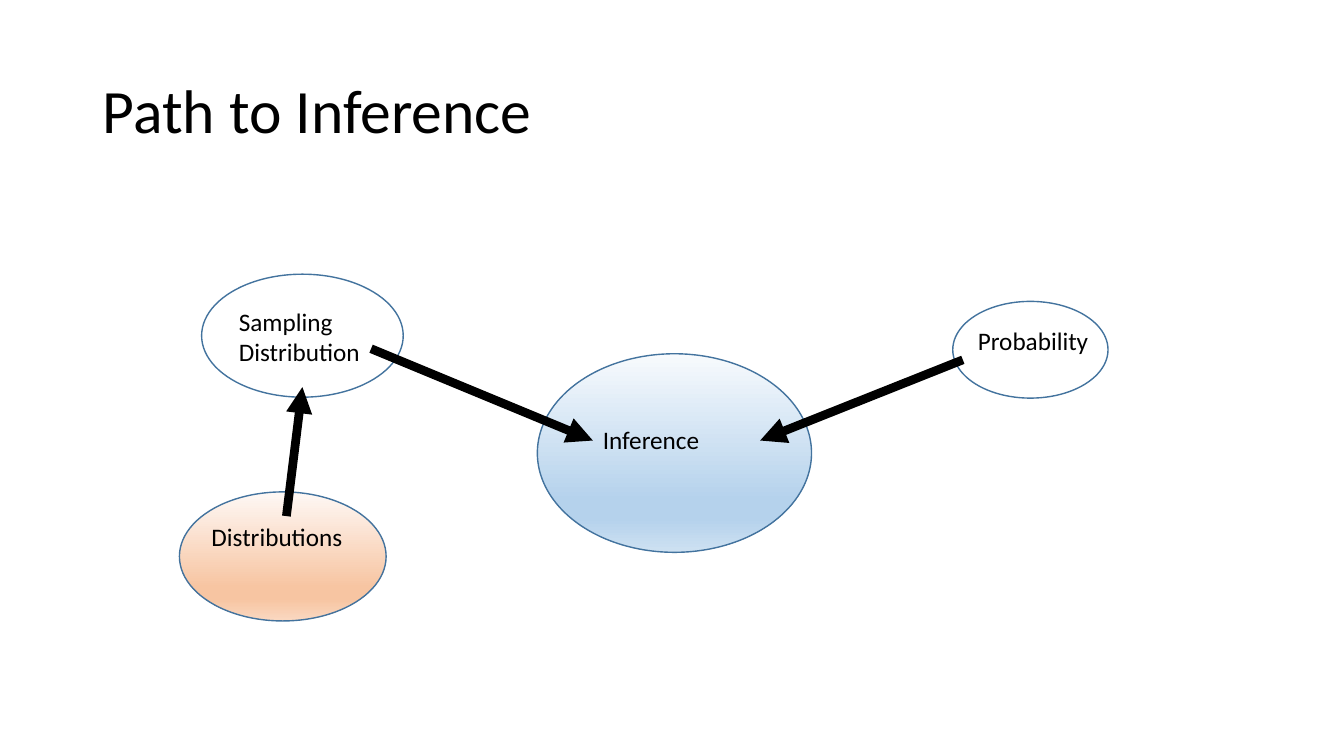
from typing import NamedTuple, Optional

from lxml import etree
from pptx import Presentation
from pptx import util as u
from pptx.dml.color import RGBColor
from pptx.enum import shapes, text
from pptx.oxml.ns import qn

FONT = "Calibri"
BLACK = "000000"
OUTLINE = "43739E"
BLUE = ("F7FAFD", "B5D2EC", "B5D2EC", "CEE1F2")
ORANGE = ("FEF8F5", "F7C5A2", "F7C5A2", "FAD8C1")
STOPS = (0, 74, 83, 100)


class Box(NamedTuple):
    """Left, top, width and height in percent of the slide."""
    left: float
    top: float
    width: float
    height: float


class Bubble(NamedTuple):
    label: str
    oval: Box
    label_box: Box
    gradient: Optional[tuple[str, ...]] = None


class Arrow(NamedTuple):
    """Tail and head points in percent of the slide."""
    tail: tuple[float, float]
    head: tuple[float, float]


BUBBLES = [
    Bubble("Inference", Box(39.98, 46.8, 20.4, 26.27), Box(44.11, 55.47, 14.7, 5.33), BLUE),
    Bubble("Sampling Distribution", Box(15, 36.27, 15, 16.27), Box(17.03, 39.87, 12.98, 9.47)),
    Bubble("Probability", Box(70.89, 39.87, 11.55, 12.8), Box(72.02, 42.4, 13.58, 5.33)),
    Bubble("Distributions", Box(13.35, 65.07, 15.38, 17.07), Box(15, 68.27, 12.6, 5.33), ORANGE),
]
ARROWS = [
    Arrow((27.61, 46.13), (44.11, 58.27)),
    Arrow((71.64, 47.6), (56.56, 58.27)),
    Arrow((21.31, 68.27), (22.5, 51.2)),
]

presentation = Presentation()
presentation.slide_width = u.Inches(13.33)
presentation.slide_height = u.Inches(7.5)
slide = presentation.slides.add_slide(presentation.slide_layouts[5])


def color(value: str) -> RGBColor:
    return RGBColor.from_string(value)


def across(percent: float) -> int:
    return round(presentation.slide_width * percent / 100)


def down(percent: float) -> int:
    return round(presentation.slide_height * percent / 100)


def place(box: Box) -> tuple[int, int, int, int]:
    return across(box.left), down(box.top), across(box.width), down(box.height)


def add_run(paragraph, words: str, size: float) -> None:
    run = paragraph.add_run()
    run.text = words
    run.font.name = FONT
    run.font.size = u.Pt(size)
    run.font.color.rgb = color(BLACK)


def fill_gradient(shape, colors: tuple[str, ...]) -> None:
    shape.fill.gradient()
    shape.fill.gradient_angle = 270  # top to bottom
    stop_list = shape.element.spPr.find(".//" + qn("a:gsLst"))
    for stop in list(stop_list):
        stop_list.remove(stop)
    for position, value in zip(STOPS, colors):
        stop = etree.SubElement(stop_list, qn("a:gs"), pos=str(position * 1000))
        etree.SubElement(stop, qn("a:srgbClr"), val=value)


def draw_bubble(bubble: Bubble) -> None:
    oval = slide.shapes.add_shape(shapes.MSO_SHAPE.OVAL, *place(bubble.oval))
    oval.shadow.inherit = False
    oval.line.color.rgb = color(OUTLINE)
    oval.line.width = u.Pt(1)
    if bubble.gradient:
        fill_gradient(oval, bubble.gradient)
    else:
        oval.fill.background()

    label = slide.shapes.add_textbox(*place(bubble.label_box))
    label.text_frame.word_wrap = True
    label.text_frame.auto_size = text.MSO_AUTO_SIZE.SHAPE_TO_FIT_TEXT
    add_run(label.text_frame.paragraphs[0], bubble.label, 18)


def draw_arrow(arrow: Arrow) -> None:
    (start_x, start_y), (end_x, end_y) = arrow
    connector = slide.shapes.add_connector(
        shapes.MSO_CONNECTOR.STRAIGHT,
        across(start_x), down(start_y), across(end_x), down(end_y))
    connector.line.color.rgb = color(BLACK)
    connector.line.width = u.Pt(6.25)
    etree.SubElement(connector.line._get_or_add_ln(), qn("a:tailEnd"), type="triangle")
    etree.SubElement(connector.element.spPr, qn("a:effectLst"))


# Title
title = slide.shapes.title
title.left, title.top, title.width, title.height = place(Box(6.9, 5.33, 86.27, 19.33))
title.text_frame.vertical_anchor = text.MSO_ANCHOR.MIDDLE
heading = title.text_frame.paragraphs[0]
heading.alignment = text.PP_ALIGN.LEFT
heading.line_spacing = 0.9
add_run(heading, "Path to Inference", 44)

# Concepts, then the arrows on top of them
for concept in BUBBLES:
    draw_bubble(concept)
for link in ARROWS:
    draw_arrow(link)

presentation.save("out.pptx")
